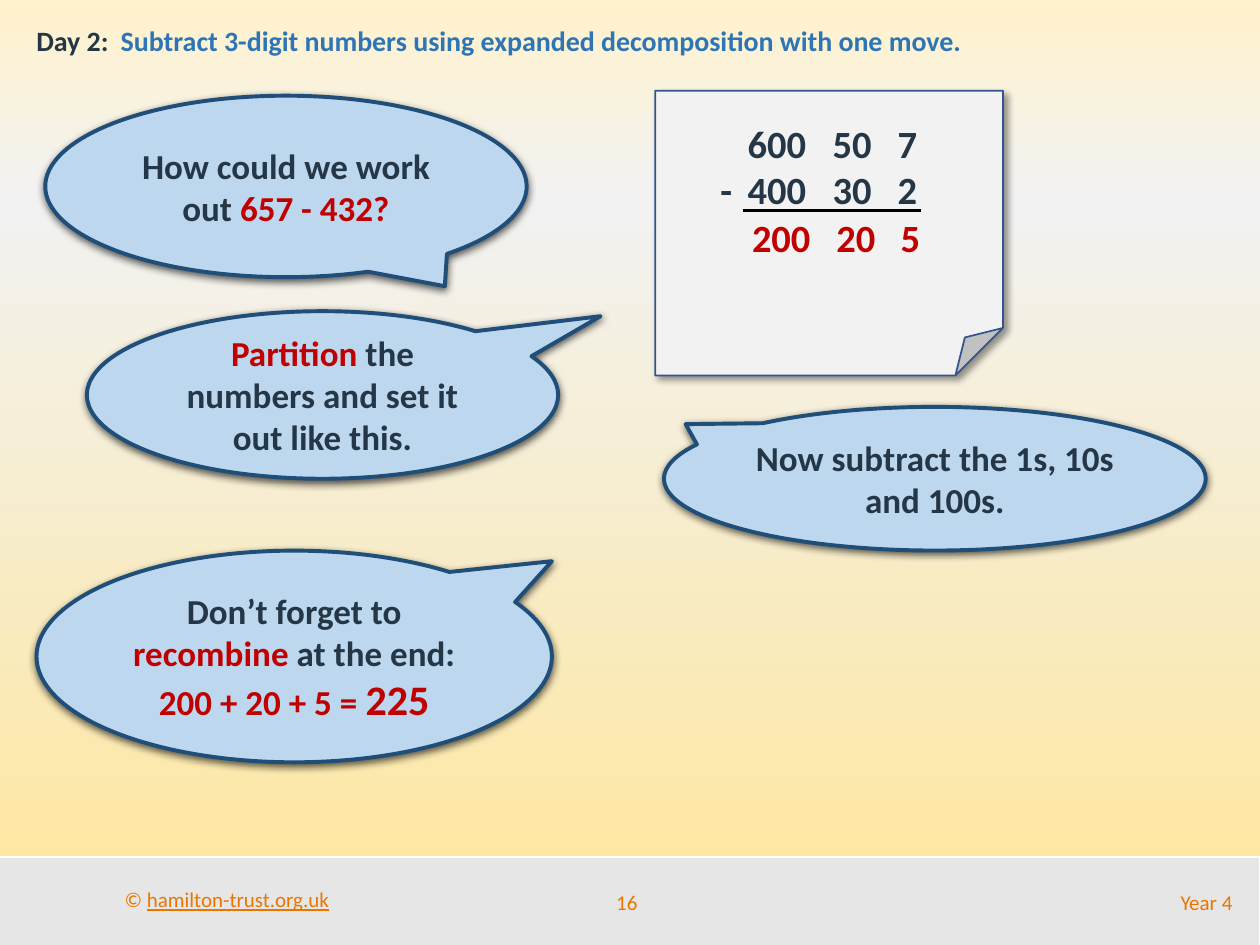
from pptx import Presentation
from pptx.dml.color import RGBColor as Rgb
from pptx.enum.shapes import MSO_CONNECTOR as Conn, MSO_SHAPE as Geo
from pptx.enum.text import MSO_ANCHOR as Anchor, PP_ALIGN as Align
from pptx.oxml import parse_xml
from pptx.oxml.ns import nsdecls, qn
from pptx.util import Pt
from lxml.etree import SubElement as Sub

PX = 9144
HUES = {
    "ink": "253746", "red": "C00000", "blue": "2E75B6", "orange": "EA7600",
    "bubble": "BDD7EE", "rim": "1F4E79", "note": "F2F2F2", "edge": "325491",
    "bar": "E7E6E6", "white": "FFFFFF", "black": "000000",
}
SKY = [(0, "FFF2CC"), (21, "F2F2F2"), (100, "FFE699")]
SOFT = (63, 4.5, 1.5, 90)
CAST = (40, 4, 3, 45)


def hue(name):
    """Give the colour of that name."""
    return Rgb.from_string(HUES[name])


def box(at):
    """Turn a px box into EMU."""
    return [n * PX for n in at]


def paint(slide):
    """Fill the background with the gradient."""
    stops = "".join(
        f'<a:gs pos="{pos * 1000}"><a:srgbClr val="{val}"/></a:gs>' for pos, val in SKY)
    bg = parse_xml(
        f'<p:bg {nsdecls("p", "a")}><p:bgPr><a:gradFill rotWithShape="1">'
        f'<a:gsLst>{stops}</a:gsLst><a:lin ang="5400000" scaled="0"/>'
        '</a:gradFill><a:effectLst/></p:bgPr></p:bg>')
    slide.element.find(qn("p:cSld")).insert(0, bg)


def shade(shape, alpha, blur, dist, angle):
    """Give a shape a black outer shadow."""
    fx = shape.element.spPr.find(qn("a:effectLst"))
    cast = Sub(fx, qn("a:outerShdw"), blurRad=str(Pt(blur)), dist=str(Pt(dist)),
               dir=str(angle * 60000), algn="ctr", rotWithShape="0")
    tone = Sub(cast, qn("a:srgbClr"), val=HUES["black"])
    Sub(tone, qn("a:alpha"), val=str(alpha * 1000))


def form(shapes, geo, at, fill, line, width, shadow=None):
    """Add a filled and outlined shape."""
    shape = shapes.add_shape(geo, *box(at))
    shape.fill.solid()
    shape.fill.fore_color.rgb = hue(fill)
    shape.line.color.rgb = hue(line)
    shape.line.width = Pt(width)
    shape.shadow.inherit = False
    if shadow:
        shade(shape, *shadow)
    return shape


def tabs(para, stops):
    """Set tab stops given as px and alignment."""
    tags = Sub(para._p.get_or_add_pPr(), qn("a:tabLst"))
    for pos, algn in stops:
        Sub(tags, qn("a:tab"), pos=str(pos * PX), algn=algn)


def write(frame, paras, size, bold=True, align=Align.LEFT, stops=()):
    """Write paragraphs of (text, colour, optional size or underline) runs."""
    for i, runs in enumerate(paras):
        para = frame.paragraphs[0] if i == 0 else frame.add_paragraph()
        para.alignment = align
        if stops:
            tabs(para, stops)
        for text, tone, *more in runs:
            run = para.add_run()
            run.text = text
            font = run.font
            font.name, font.bold, font.size = "Calibri", bold, Pt(size)
            font.color.rgb = hue(tone)
            if "u" in more:
                font.underline = True
            elif more:
                font.size = Pt(more[0])


def label(slide, at, runs, size, wrap=True, anchor=Anchor.TOP, **style):
    """Add a one-line text box."""
    frame = slide.shapes.add_textbox(*box(at)).text_frame
    frame.word_wrap = wrap
    frame.vertical_anchor = anchor
    write(frame, [runs], size, **style)


def bubble(slide, at, tip, paras):
    """Add a speech bubble with its tip."""
    shape = form(slide.shapes, Geo.OVAL_CALLOUT, at, "bubble", "rim", 2.25, SOFT)
    for i, part in enumerate(tip):
        shape.adjustments[i] = part
    frame = shape.text_frame
    frame.word_wrap = True
    frame.vertical_anchor = Anchor.MIDDLE
    write(frame, paras, 20, align=Align.CENTER)


def note(slide):
    """Add the sheet with the sum and its rule."""
    group = slide.shapes.add_group_shape().shapes
    sheet = form(group, Geo.FOLDED_CORNER, (520, 72, 276, 226), "note", "edge", 1, CAST)
    frame = sheet.text_frame
    frame.word_wrap = True
    frame.vertical_anchor = Anchor.TOP
    frame.margin_top = 23 * PX
    stops = [(42, "l"), (110, "r"), (162, "r"), (198, "r")]
    rows = ["\t\t600\t50\t7", "\t-\t400\t30\t2"]
    write(frame, [[(row, "ink")] for row in rows], 22, stops=stops)
    rule = group.add_connector(Conn.STRAIGHT, *box((590, 167, 731, 167)))
    rule.line.color.rgb = hue("black")
    rule.line.width = Pt(2)
    Sub(rule.element.spPr, qn("a:effectLst"))


def footer(slide):
    """Add the bar with its three labels."""
    form(slide.shapes, Geo.RECTANGLE, (-6, 680, 1006, 72), "bar", "white", 1)
    label(slide, (89, 699, 184, 30),
          [("© ", "orange"), ("hamilton-trust.org.uk", "orange", "u")],
          12, wrap=False, bold=False)
    for at, text, align in [((458, 696, 79, 40), "16", Align.CENTER),
                            ((650, 696, 338, 40), "Year 4", Align.RIGHT)]:
        label(slide, at, [(text, "orange")], 12, anchor=Anchor.MIDDLE,
              bold=False, align=align)


def main():
    """Build the slide and save it."""
    deck = Presentation()
    deck.slide_width, deck.slide_height = box((1000, 750))
    slide = deck.slides.add_slide(deck.slide_layouts[6])
    paint(slide)
    footer(slide)
    bubble(slide, (36, 76, 382, 144), (0.33, 0.55),
           [[("How could we work out ", "ink"), ("657 - 432?", "red")]])
    label(slide, (19, 14, 954, 37),
          [("Day 2:\t", "ink"),
           ("Subtract 3-digit numbers using expanded decomposition with one move.", "blue")],
          16, stops=[(67, "l")])
    note(slide)
    for left, text in [(587, "200"), (654, "20"), (705, "5")]:
        label(slide, (left, 165, 75, 47), [(text, "red")], 22)
    bubble(slide, (69, 247, 374, 133), (0.59, -0.47),
           [[("Partition", "red"), (" the numbers and set it out like this.", "ink")]])
    bubble(slide, (527, 323, 430, 114), (-0.46, -0.38),
           [[("Now subtract the 1s, 10s and 100s.", "ink")]])
    bubble(slide, (29, 437, 409, 168), (0.5, -0.45),
           [[("Don’t forget to ", "ink"), ("recombine", "red"), (" at the end:", "ink")],
            [("200 + 20 + 5 = ", "red"), ("225", "red", 24)]])
    deck.save("out.pptx")


if __name__ == "__main__":
    main()
